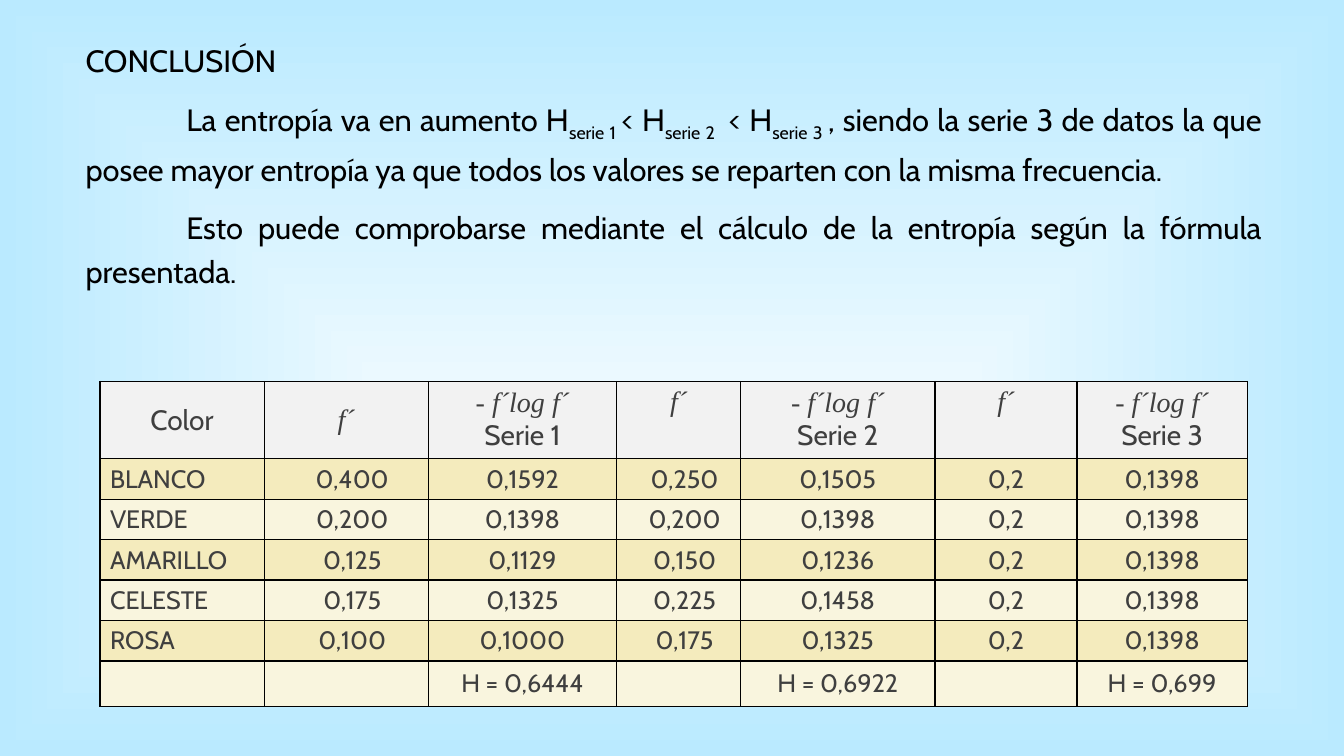
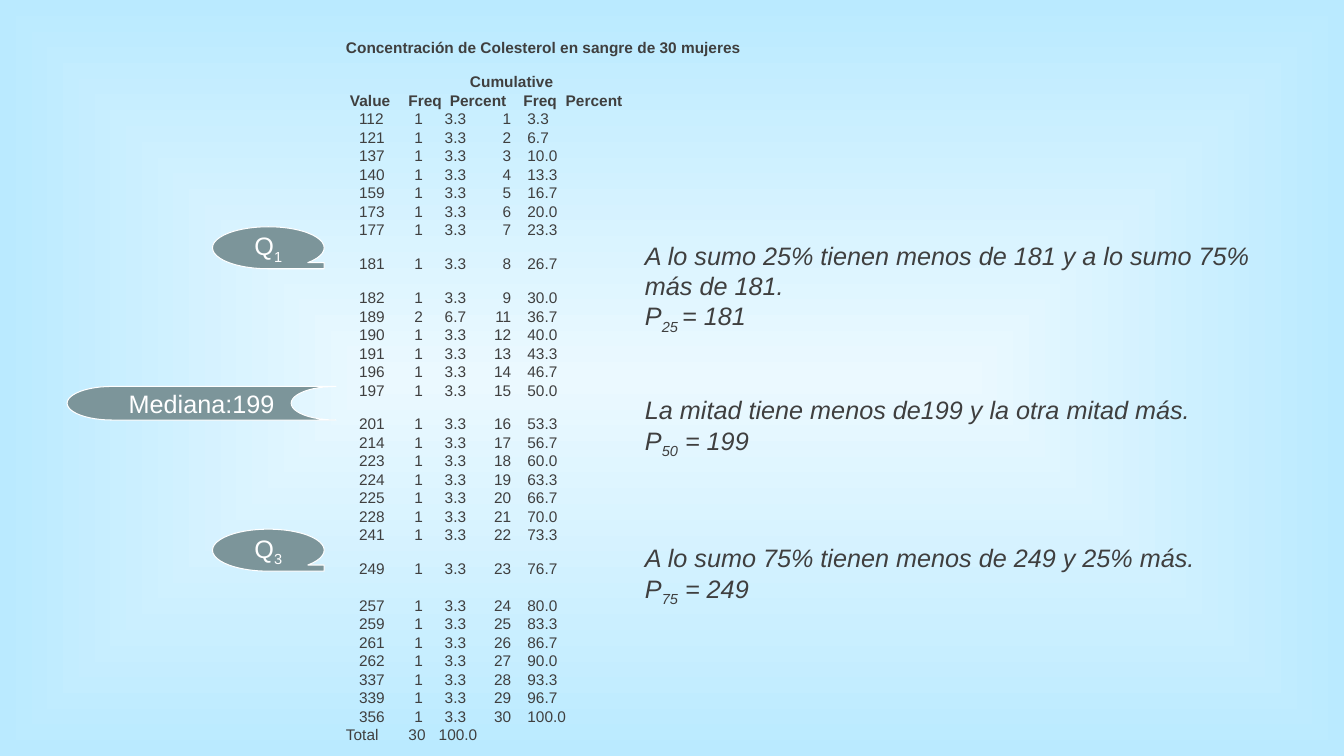
from itertools import accumulate

from lxml import etree
from pptx import Presentation, util as u
from pptx.dml.color import RGBColor
from pptx.enum import shapes, text
from pptx.oxml.ns import qn

WIDTH, HEIGHT = u.Inches(13.33), u.Inches(7.5)
COLUMNS, ROWS = 160, 90  # grid that every box (left, top, width, height) is given in
COLORS = {
    "glow": "EBF9FF", "sky": "BAEAFF", "black": "000000", "white": "FFFFFF",
    "ink": "3F3F3F", "tag": "7C959A", "header": "F2F2F2",
    "dark band": "F4EBBD", "light band": "F9F5DE",
}
ALIGN, ANCHOR = text.PP_ALIGN, text.MSO_ANCHOR
SHAPE = shapes.MSO_SHAPE

CONCLUSION = [
    "CONCLUSIÓN",
    "La entropía va en aumento H|serie 1 |< H|serie 2 | < H|serie 3 |, siendo la serie 3 de datos "
    "la que posee mayor entropía ya que todos los valores se reparten con la misma frecuencia.",
    "Esto puede comprobarse mediante el cálculo de la entropía según la fórmula presentada.",
]
ENTROPY_WIDTHS = [1.63, 1.63, 1.87, 1.23, 1.93, 1.41, 1.69]
ENTROPY_HEIGHTS = [0.74, 0.4, 0.4, 0.4, 0.4, 0.4, 0.45]
ENTROPY = [
    ["Color", "f´", "- f´log f´\nSerie 1", "f´", "- f´log f´\nSerie 2", "f´", "- f´log f´\nSerie 3"],
    ["BLANCO", "0,400", "0,1592", "0,250", "0,1505", "0,2", "0,1398"],
    ["VERDE", "0,200", "0,1398", "0,200", "0,1398", "0,2", "0,1398"],
    ["AMARILLO", "0,125", "0,1129", "0,150", "0,1236", "0,2", "0,1398"],
    ["CELESTE", "0,175", "0,1325", "0,225", "0,1458", "0,2", "0,1398"],
    ["ROSA", "0,100", "0,1000", "0,175", "0,1325", "0,2", "0,1398"],
    ["", "", "H = 0,6444", "", "H = 0,6922", "", "H = 0,699"],
]

VALUES = [112, 121, 137, 140, 159, 173, 177, 181, 182, 189, 190, 191, 196, 197, 201,
          214, 223, 224, 225, 228, 241, 249, 257, 259, 261, 262, 337, 339, 356]
COUNTS = [2 if value == 189 else 1 for value in VALUES]
GAPS = {181: 11, 182: 11, 201: 11, 249: 11, 257: 13}  # points above these values

# Tab stops in inches, with their alignment
GROUP_TABS = [(1.23, "l")]
HEADING_TABS = [(0.04, "l"), (0.62, "l"), (1.03, "l"), (1.76, "l"), (2.18, "l")]
VALUE_TABS = [(0.13, "l"), (0.68, "l"), (0.98, "l"), (1.64, "r"), (1.8, "l")]
TOTAL_TABS = [(0.62, "l"), (0.92, "l")]


def color(name):
    return RGBColor.from_string(COLORS[name])


def place(box):
    """Turn grid columns and rows into slide lengths."""
    left, top, width, height = box
    return (int(WIDTH * left / COLUMNS), int(HEIGHT * top / ROWS),
            int(WIDTH * width / COLUMNS), int(HEIGHT * height / ROWS))


def style(para, size, tone="ink", font="Arial", bold=False, italic=False):
    for span in para.runs:
        span.font.size = u.Pt(size)
        span.font.name = font
        span.font.bold = bold
        span.font.italic = italic
        span.font.color.rgb = color(tone)


def write(para, words, size, **look):
    """Write one paragraph; every second part between bars is a subscript."""
    for index, part in enumerate(words.split("|")):
        span = para.add_run()
        span.text = part
        if index % 2:
            span.font._element.set("baseline", "-25000")
    style(para, size, **look)


def paragraphs(frame, count):
    return [frame.paragraphs[0]] + [frame.add_paragraph() for _ in range(count - 1)]


def text_box(page, box):
    frame = page.shapes.add_textbox(*place(box)).text_frame
    frame.word_wrap = True
    return frame


def set_background(master):
    master.background.fill.gradient()
    gradient = master.element.find(".//" + qn("a:gradFill"))
    for child in list(gradient):
        gradient.remove(child)
    stops = etree.SubElement(gradient, qn("a:gsLst"))
    for position, name in ((0, "glow"), (100000, "sky")):
        stop = etree.SubElement(stops, qn("a:gs"), pos=str(position))
        etree.SubElement(stop, qn("a:srgbClr"), val=COLORS[name])
    shade = etree.SubElement(gradient, qn("a:path"))
    shade.set("path", "shape")
    etree.SubElement(shade, qn("a:fillToRect"), {side: "50000" for side in "ltrb"})


# Entropy slide
def conclusion(page, box):
    frame = text_box(page, box)
    for index, para in enumerate(paragraphs(frame, len(CONCLUSION))):
        write(para, CONCLUSION[index], 22, tone="black", font="Cabin")
        para.line_spacing = 1.2
        para.space_before = u.Pt(10)
        if index:
            para.alignment = ALIGN.JUSTIFY
            para._p.get_or_add_pPr().set("indent", str(u.Inches(1)))


def outline(cell):
    props = cell._tc.get_or_add_tcPr()
    for index, side in enumerate(("lnL", "lnR", "lnT", "lnB")):
        line = etree.Element(qn("a:" + side), w=str(u.Pt(1)))
        fill = etree.SubElement(line, qn("a:solidFill"))
        etree.SubElement(fill, qn("a:srgbClr"), val=COLORS["black"])
        props.insert(index, line)


def fill_cell(cell, words, row, column):
    band = "header" if row == 0 else "dark band" if row % 2 and row < 6 else "light band"
    cell.fill.solid()
    cell.fill.fore_color.rgb = color(band)
    outline(cell)
    cell.vertical_anchor = ANCHOR.TOP if row == 0 and column in (3, 5) else ANCHOR.MIDDLE
    if row and column in (1, 3):
        cell.margin_left = u.Inches(0.22)
    cell.text_frame.text = words
    for para in cell.text_frame.paragraphs:
        formula = "f´" in para.text
        para.alignment = ALIGN.LEFT if row and column == 0 else ALIGN.CENTER
        style(para, 18 if row else 20, italic=formula,
              font="Times New Roman" if formula else "Cabin")


def entropy_table(page, box):
    left, top, width, height = place(box)
    table = page.shapes.add_table(len(ENTROPY), len(ENTROPY[0]), left, top, width, height).table
    for column, share in zip(table.columns, ENTROPY_WIDTHS):
        column.width = int(width * share / sum(ENTROPY_WIDTHS))
    for row, share in zip(table.rows, ENTROPY_HEIGHTS):
        row.height = int(height * share / sum(ENTROPY_HEIGHTS))
    for row, line in enumerate(ENTROPY):
        for column, words in enumerate(line):
            fill_cell(table.cell(row, column), words, row, column)


# Quartile slide
def frequency_lines():
    """Yield words, tab stops, boldness and the gap above for each line."""
    total = sum(COUNTS)
    yield "Concentración de Colesterol en sangre de 30 mujeres", [], True, 0
    yield "\tCumulative", GROUP_TABS, True, 11
    yield "\tValue\tFreq\tPercent\tFreq\tPercent", HEADING_TABS, True, 0
    for value, count, running in zip(VALUES, COUNTS, accumulate(COUNTS)):
        words = f"\t{value}\t{count}\t{100 * count / total:.1f}\t{running}\t{100 * running / total:.1f}"
        yield words, VALUE_TABS, False, GAPS.get(value, 0)
    yield f"Total\t{total}\t100.0", TOTAL_TABS, False, 0


def frequency_list(page, box):
    lines = list(frequency_lines())
    frame = text_box(page, box)
    for para, (words, tabs, bold, gap) in zip(paragraphs(frame, len(lines)), lines):
        write(para, words, 11, bold=bold)
        para.space_before = u.Pt(gap)
        if tabs:
            stops = etree.SubElement(para._p.get_or_add_pPr(), qn("a:tabLst"))
            for position, side in tabs:
                etree.SubElement(stops, qn("a:tab"), pos=str(u.Inches(position)), algn=side)


def tag(page, box, kind, words):
    shape = page.shapes.add_shape(kind, *place(box))
    shape.shadow.inherit = False
    shape.fill.solid()
    shape.fill.fore_color.rgb = color("tag")
    shape.line.color.rgb = color("white")
    shape.line.width = u.Pt(0.75)
    frame = shape.text_frame
    frame.word_wrap = False
    frame.vertical_anchor = ANCHOR.MIDDLE
    para = frame.paragraphs[0]
    para.alignment = ALIGN.CENTER
    write(para, words, 18, tone="white")


def note(page, box, lines):
    frame = text_box(page, box)
    for para, words in zip(paragraphs(frame, len(lines)), lines):
        write(para, words, 18, italic=True)


def entropy_slide(page):
    conclusion(page, (9, 3.5, 142.4, 32.3))
    entropy_table(page, (11.9, 45.4, 136.6, 38.4))


def quartile_slide(page):
    frequency_list(page, (40, 4, 80, 85.2))
    tag(page, (8, 46, 32, 4), SHAPE.FLOWCHART_STORED_DATA, "Mediana:199")
    for top, words in ((27, "Q|1"), (63, "Q|3")):
        tag(page, (25.3, top, 13.3, 5), SHAPE.FLOWCHART_SEQUENTIAL_ACCESS_STORAGE, words)
    notes = [
        (28, 12.1, ["A lo sumo 25% tienen menos de 181 y a lo sumo 75% más de 181.", "P|25 |= 181"]),
        (46.4, 8.5, ["La mitad tiene menos de199 y la otra mitad más.", "P|50| = 199"]),
        (64, 8.5, ["A lo sumo 75% tienen menos de 249 y 25% más.", "P|75| = 249"]),
    ]
    for top, height, lines in notes:
        note(page, (75.6, top, 79.5, height), lines)


def main():
    deck = Presentation()
    deck.slide_width, deck.slide_height = WIDTH, HEIGHT
    set_background(deck.slide_master)
    for build in (entropy_slide, quartile_slide):
        build(deck.slides.add_slide(deck.slide_layouts[6]))
    deck.save("out.pptx")


if __name__ == "__main__":
    main()
